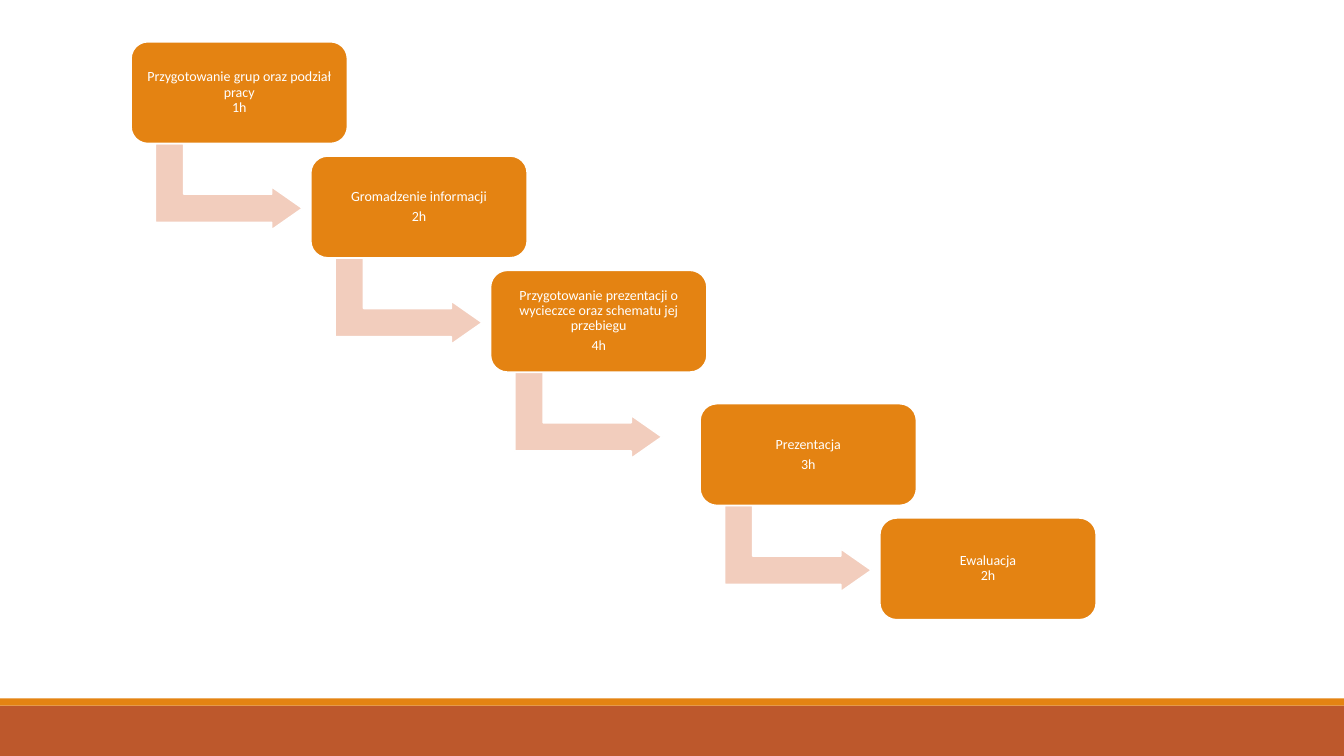
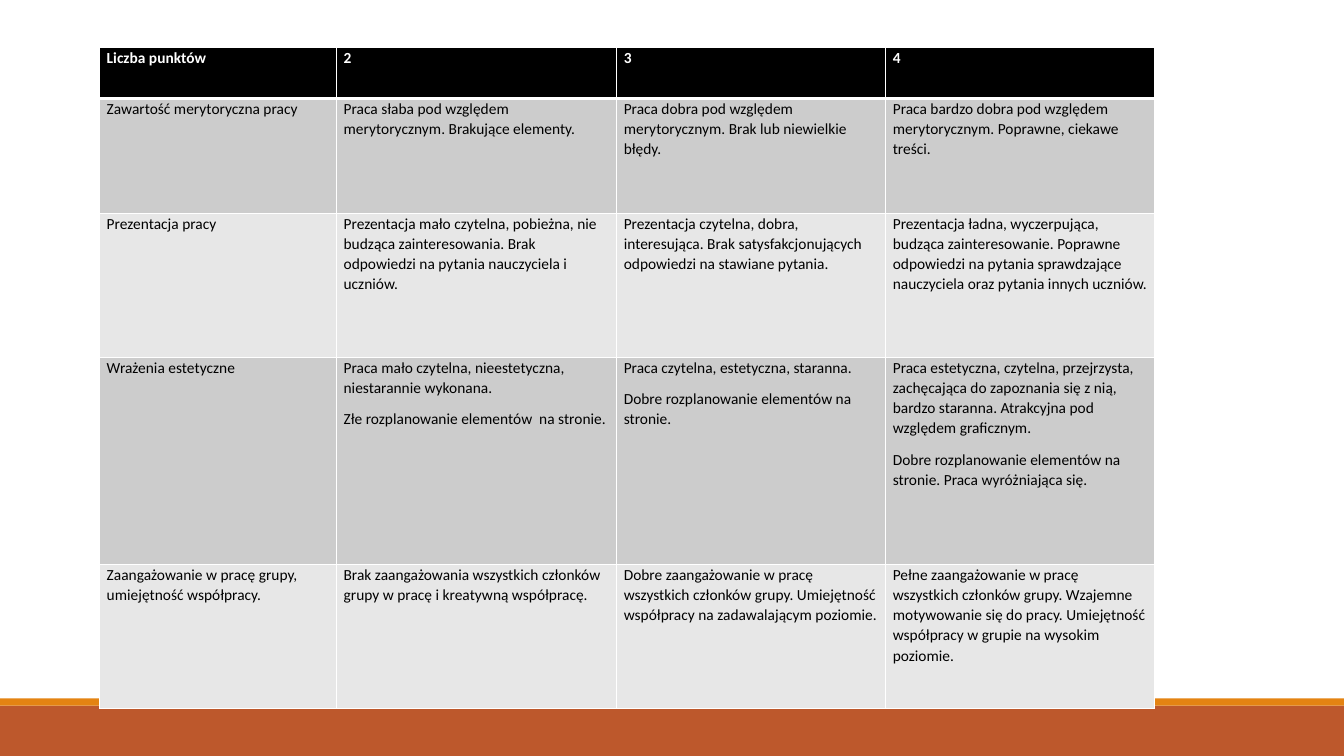
import copy

import lxml.etree
import pptx
import pptx.dml.color
import pptx.enum.shapes
import pptx.enum.text
import pptx.oxml.ns
import pptx.util

Cm = pptx.util.Cm
Pt = pptx.util.Pt
qn = pptx.oxml.ns.qn
SHAPE = pptx.enum.shapes.MSO_SHAPE
ALIGN = pptx.enum.text.PP_ALIGN
ANCHOR = pptx.enum.text.MSO_ANCHOR

STAGES = [
    "Przygotowanie grup oraz podział pracy\v1h",
    "Gromadzenie informacji\n2h",
    "Przygotowanie prezentacji o wycieczce oraz schematu jej przebiegu\n4h",
    "Prezentacja\n3h",
    "Ewaluacja\v2h",
]

CRITERIA = [
    ["Liczba punktów", "2", "3", "4"],
    [
        "Zawartość merytoryczna pracy",
        "Praca słaba pod względem merytorycznym. Brakujące elementy.",
        "Praca dobra pod względem merytorycznym. Brak lub niewielkie błędy.",
        "Praca bardzo dobra pod względem merytorycznym. Poprawne, ciekawe treści.",
    ],
    [
        "Prezentacja pracy",
        "Prezentacja mało czytelna, pobieżna, nie budząca zainteresowania. "
        "Brak odpowiedzi na pytania nauczyciela i uczniów.",
        "Prezentacja czytelna, dobra, interesująca. "
        "Brak satysfakcjonujących odpowiedzi na stawiane pytania.",
        "Prezentacja ładna, wyczerpująca, budząca zainteresowanie. Poprawne odpowiedzi "
        "na pytania sprawdzające nauczyciela oraz pytania innych uczniów.",
    ],
    [
        "Wrażenia estetyczne",
        "Praca mało czytelna, nieestetyczna, niestarannie wykonana.\n"
        "Złe rozplanowanie elementów  na stronie.",
        "Praca czytelna, estetyczna, staranna.\n"
        "Dobre rozplanowanie elementów na stronie.",
        "Praca estetyczna, czytelna, przejrzysta, zachęcająca do zapoznania się z nią, "
        "bardzo staranna. Atrakcyjna pod względem graficznym.\n"
        "Dobre rozplanowanie elementów na stronie. Praca wyróżniająca się.",
    ],
    [
        "Zaangażowanie w pracę grupy, umiejętność współpracy.",
        "Brak zaangażowania wszystkich członków grupy w pracę i kreatywną współpracę.",
        "Dobre zaangażowanie w pracę wszystkich członków grupy. "
        "Umiejętność współpracy na zadawalającym poziomie.",
        "Pełne zaangażowanie w pracę wszystkich członków grupy. Wzajemne motywowanie "
        "się do pracy. Umiejętność współpracy w grupie na wysokim poziomie.",
    ],
]


def rgb(value):
    return pptx.dml.color.RGBColor.from_string(value)


class Deck:
    """Holds the shared style and the current slide."""

    FONT = "Calibri"
    ORANGE, RUST, PEACH = "E48312", "BD582C", "F2CDBD"
    WHITE, BLACK = "FFFFFF", "000000"
    ROW_FILLS = ["CCCCCC", "E7E7E7"]
    WIDTH, HEIGHT = 33.87, 19.05

    def __init__(self):
        self.prs = pptx.Presentation()
        self.prs.slide_width = Cm(self.WIDTH)
        self.prs.slide_height = Cm(self.HEIGHT)
        self.s = None

    def slide(self):
        self.s = self.prs.slides.add_slide(self.prs.slide_layouts[6])
        self.shape(SHAPE.RECTANGLE, 0, 17.78, self.WIDTH, 1.27, self.RUST)
        self.shape(SHAPE.RECTANGLE, 0, 17.6, self.WIDTH, 0.18, self.ORANGE)

    def shape(self, kind, x, y, w, h, fill, outline=None, adjustments=()):
        sp = self.s.shapes.add_shape(kind, Cm(x), Cm(y), Cm(w), Cm(h))
        sp.shadow.inherit = False
        sp.fill.solid()
        sp.fill.fore_color.rgb = rgb(fill)
        if outline:
            sp.line.color.rgb = rgb(outline)
            sp.line.width = Pt(1.25)
        else:
            sp.line.fill.background()
        for i, value in enumerate(adjustments):
            sp.adjustments[i] = value
        return sp

    def text(self, tf, text, size, color, spacing, after, align=ALIGN.LEFT, bold=False):
        tf.text = text
        tf.word_wrap = True
        for p in tf.paragraphs:
            p.alignment = align
            p.line_spacing = spacing
            p.space_after = Pt(after)
            for r in p.runs:
                r.font.name = self.FONT
                r.font.size = Pt(size)
                r.font.bold = bold
                r.font.color.rgb = rgb(color)
            for br in p._p.findall(qn("a:br")):
                br.append(copy.deepcopy(p.runs[0].font._rPr))

    def stage(self, x, y, text):
        sp = self.shape(SHAPE.ROUNDED_RECTANGLE, x, y, 5.46, 2.57,
                        self.ORANGE, self.WHITE, [0.167])
        tf = sp.text_frame
        tf.vertical_anchor = ANCHOR.MIDDLE
        tf.margin_left = tf.margin_right = Cm(0.16)
        tf.margin_top = tf.margin_bottom = Cm(0.1)
        self.text(tf, text, 10, self.WHITE, 0.9, 3.5, ALIGN.CENTER)

    def bent_arrow(self, x, y):
        sp = self.shape(SHAPE.BENT_UP_ARROW, x, y, 2.18, 3.71,
                        self.PEACH, self.WHITE, [0.328, 0.25, 0.358])
        sp.rotation = 90

    def borders(self, cell, bottom):
        tc_pr = cell._tc.get_or_add_tcPr()
        widths = {"lnL": 1, "lnR": 1, "lnT": 1, "lnB": bottom}
        for i, (side, width) in enumerate(widths.items()):
            ln = lxml.etree.Element(qn("a:" + side), w=str(Pt(width)))
            fill = lxml.etree.SubElement(ln, qn("a:solidFill"))
            lxml.etree.SubElement(fill, qn("a:srgbClr"), val=self.WHITE)
            tc_pr.insert(i, ln)

    def table(self, x, y, widths, heights, rows):
        table = self.s.shapes.add_table(
            len(rows), len(widths), Cm(x), Cm(y), Cm(sum(widths)), Cm(sum(heights))).table
        table.horz_banding = False
        for column, width in zip(table.columns, widths):
            column.width = Cm(width)
        for i, (row, height, texts) in enumerate(zip(table.rows, heights, rows)):
            row.height = Cm(height)
            header = i == 0
            for cell, text in zip(row.cells, texts):
                cell.margin_left = cell.margin_right = Cm(0.18)
                cell.margin_top = cell.margin_bottom = 0
                cell.fill.solid()
                cell.fill.fore_color.rgb = rgb(
                    self.BLACK if header else self.ROW_FILLS[(i - 1) % 2])
                self.borders(cell, 3 if header else 1)
                self.text(cell.text_frame, text, 11,
                          self.WHITE if header else self.BLACK, 1.06, 8, bold=header)


def main():
    deck = Deck()

    deck.slide()
    for i, text in enumerate(STAGES):
        lower = i >= 3
        x = 3.3 + 4.53 * i + 0.75 * lower
        y = 1.05 + 2.88 * i + 0.48 * lower
        if i < len(STAGES) - 1:
            deck.bent_arrow(x + 1.38, y + 1.8)
        deck.stage(x, y, text)

    deck.slide()
    deck.table(2.51, 1.2, [5.97, 7.06, 6.78, 6.78], [1.28, 2.9, 3.63, 5.22, 3.63], CRITERIA)

    deck.prs.save("out.pptx")


if __name__ == "__main__":
    main()
